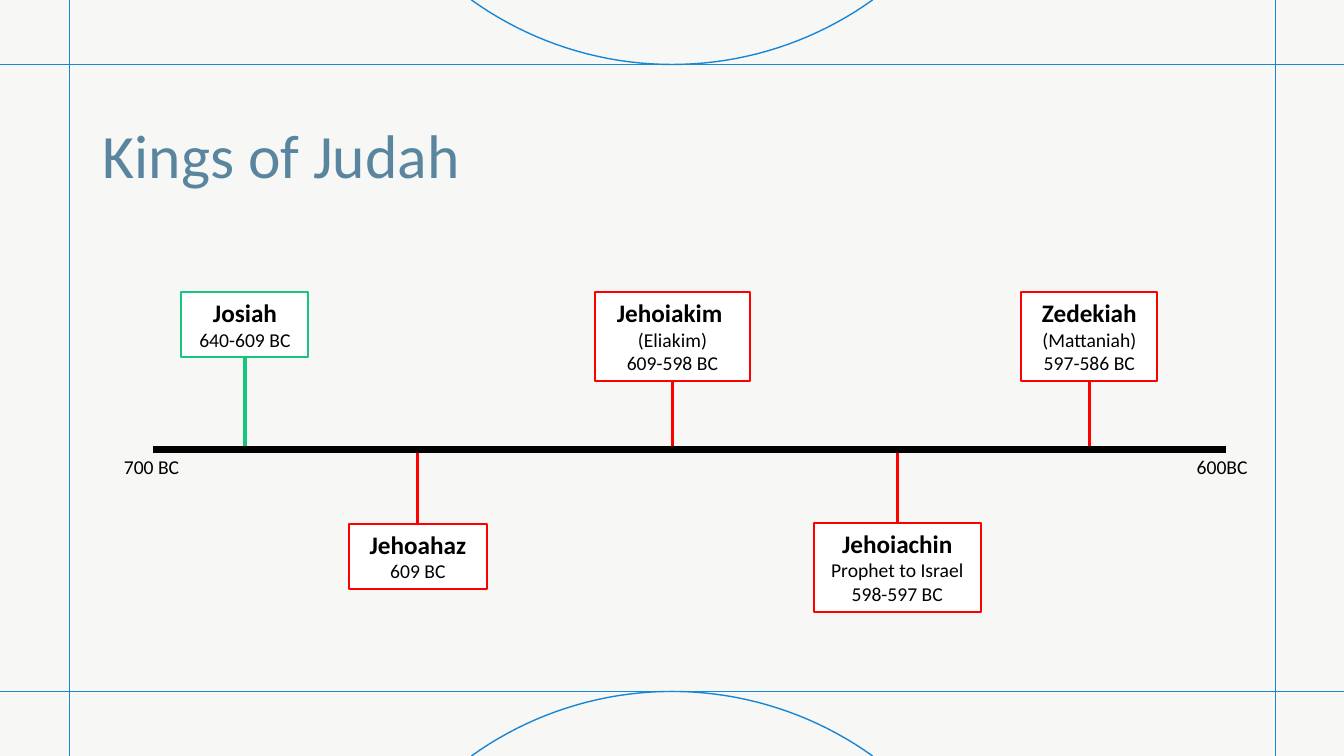
from math import asin, cos, sin

from lxml.etree import SubElement
from pptx import Presentation
from pptx.dml.color import RGBColor
from pptx.enum.shapes import MSO_CONNECTOR, MSO_SHAPE
from pptx.enum.text import MSO_ANCHOR, MSO_AUTO_SIZE, PP_ALIGN
from pptx.oxml.ns import qn
from pptx.util import Inches, Pt

PAPER = RGBColor(0xF7, 0xF8, 0xF6)
FRAME_BLUE = RGBColor(0x17, 0x87, 0xD5)
TITLE_BLUE = RGBColor(0x5A, 0x85, 0x9F)
GREEN = RGBColor(0x16, 0xC6, 0x7B)
RED = RGBColor(0xFF, 0x00, 0x00)
BLACK = RGBColor(0x00, 0x00, 0x00)
WHITE = RGBColor(0xFF, 0xFF, 0xFF)

WIDTH, HEIGHT = 13.33, 7.5
MARGIN_TOP, MARGIN_BOTTOM = 0.64, 6.86
AXIS_Y = 4.46
ARC_HALF_WIDTH, ARC_RADIUS, ARC_STEPS = 1.99, 3.41, 40

KINGS = [
    (1.8, 2.9, 1.26, 0.64, GREEN, ["Josiah", "640-609 BC"]),
    (3.46, 5.2, 1.37, 0.64, RED, ["Jehoahaz", "609 BC"]),
    (5.9, 2.9, 1.54, 0.88, RED, ["Jehoiakim ", "(Eliakim)", "609-598 BC"]),
    (8.07, 5.19, 1.66, 0.88, RED, ["Jehoiachin", "Prophet to Israel", "598-597 BC"]),
    (10.13, 2.9, 1.35, 0.88, RED, ["Zedekiah", "(Mattaniah)", "597-586 BC"]),
]


def add_line(slide, x1, y1, x2, y2, color, weight):
    line = slide.shapes.add_connector(
        MSO_CONNECTOR.STRAIGHT, Inches(x1), Inches(y1), Inches(x2), Inches(y2))
    line.line.color.rgb = color
    line.line.width = Pt(weight)
    SubElement(line._element.spPr, qn("a:effectLst"))


def add_arc(slide, tip_y, direction):
    half_angle = asin(ARC_HALF_WIDTH / ARC_RADIUS)
    angles = [half_angle * (2 * step / ARC_STEPS - 1) for step in range(ARC_STEPS + 1)]
    points = [(Inches(WIDTH / 2 + ARC_RADIUS * sin(angle)),
               Inches(tip_y + direction * ARC_RADIUS * (1 - cos(angle))))
              for angle in angles]
    builder = slide.shapes.build_freeform(*points[0])
    builder.add_line_segments(points[1:], close=False)
    arc = builder.convert_to_shape()
    arc.shadow.inherit = False
    arc.fill.background()
    arc.line.color.rgb = FRAME_BLUE
    arc.line.width = Pt(1)


def add_run(paragraph, text, size, color=BLACK, bold=False):
    run = paragraph.add_run()
    run.text = text
    run.font.name = "Calibri"
    run.font.size = Pt(size)
    run.font.bold = bold
    run.font.color.rgb = color


def add_label(slide, left, top, width, height, text, size, color=BLACK, wrap=False):
    box = slide.shapes.add_textbox(Inches(left), Inches(top), Inches(width), Inches(height))
    frame = box.text_frame
    frame.word_wrap = wrap
    frame.vertical_anchor = MSO_ANCHOR.MIDDLE
    add_run(frame.paragraphs[0], text, size, color)


def add_king(slide, left, top, width, height, color, lines):
    box = slide.shapes.add_shape(
        MSO_SHAPE.RECTANGLE, Inches(left), Inches(top), Inches(width), Inches(height))
    box.shadow.inherit = False
    box.fill.solid()
    box.fill.fore_color.rgb = WHITE
    box.line.color.rgb = color
    box.line.width = Pt(1.5)
    frame = box.text_frame
    frame.word_wrap = False
    frame.auto_size = MSO_AUTO_SIZE.SHAPE_TO_FIT_TEXT
    frame.vertical_anchor = MSO_ANCHOR.TOP
    for index, text in enumerate(lines):
        paragraph = frame.add_paragraph() if index else frame.paragraphs[0]
        paragraph.alignment = PP_ALIGN.CENTER
        add_run(paragraph, text, 14 if index else 18, bold=index == 0)
    center = left + width / 2
    edge = top + height if top < AXIS_Y else top
    add_line(slide, center, edge, center, AXIS_Y, color, 2.25)


def add_frame(slide):
    for y in (MARGIN_BOTTOM, MARGIN_TOP):
        add_line(slide, 0, y, WIDTH, y, FRAME_BLUE, 1)
    for x in (12.65, 0.69):
        add_line(slide, x, HEIGHT, x, 0, FRAME_BLUE, 1)
    add_arc(slide, MARGIN_TOP, -1)
    add_arc(slide, MARGIN_BOTTOM, 1)


def main():
    presentation = Presentation()
    presentation.slide_width = Inches(WIDTH)
    presentation.slide_height = Inches(HEIGHT)
    slide = presentation.slides.add_slide(presentation.slide_layouts[6])
    slide.background.fill.solid()
    slide.background.fill.fore_color.rgb = PAPER
    add_frame(slide)
    add_label(slide, 0.92, 0.8, 11.5, 1.45, "Kings of Judah", 44, TITLE_BLUE, wrap=True)
    add_label(slide, 1.13, AXIS_Y, 0.86, 0.34, "700 BC", 14)
    add_label(slide, 11.77, AXIS_Y, 0.81, 0.34, "600BC", 14)
    for king in KINGS:
        add_king(slide, *king)
    add_line(slide, 1.52, AXIS_Y, 12.16, AXIS_Y, BLACK, 4.5)
    presentation.save("out.pptx")


if __name__ == "__main__":
    main()
